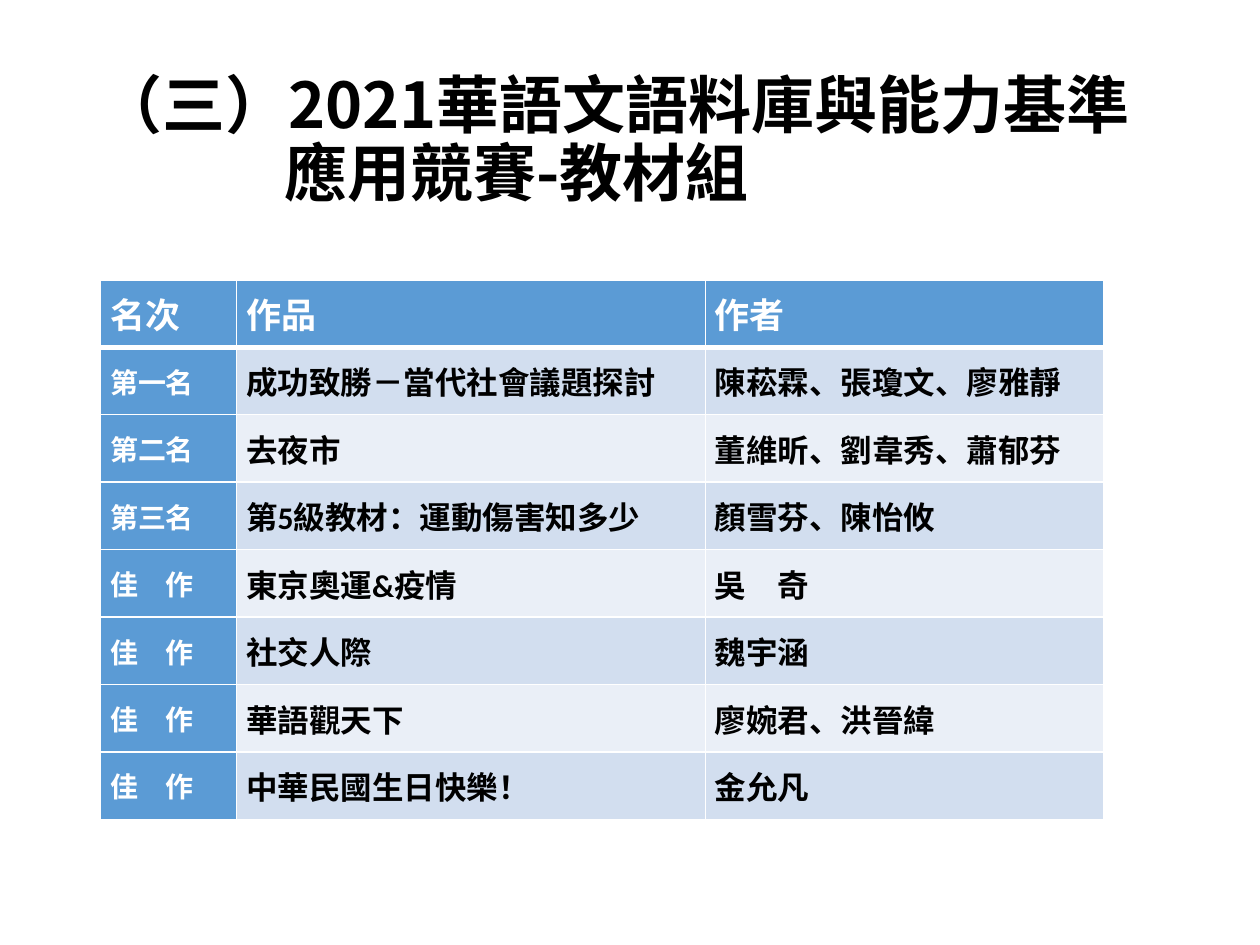
import pptx
import pptx.util
import pptx.dml.color
import pptx.enum.text
import pptx.oxml.ns
import lxml.etree

Cm = pptx.util.Cm
Pt = pptx.util.Pt
RGB = pptx.dml.color.RGBColor
MIDDLE = pptx.enum.text.MSO_ANCHOR.MIDDLE

BLACK = RGB(0x00, 0x00, 0x00)
WHITE = RGB(0xFF, 0xFF, 0xFF)
BLUE = RGB(0x5B, 0x9B, 0xD5)
BANDS = (RGB(0xEA, 0xEF, 0xF7), RGB(0xD2, 0xDE, 0xEF))

TITLE = "（三）2021華語文語料庫與能力基準應用競賽-教材組"
WIDTHS = (2.74, 9.45, 8.03)
HEIGHT = 1.36
ROWS = (
    ("名次", "作品", "作者"),
    ("第一名", "成功致勝－當代社會議題探討", "陳菘霖、張瓊文、廖雅靜"),
    ("第二名", "去夜市", "董維昕、劉韋秀、蕭郁芬"),
    ("第三名", "第5級教材：運動傷害知多少", "顏雪芬、陳怡攸"),
    ("佳　作", "東京奧運&疫情", "吳　奇"),
    ("佳　作", "社交人際", "魏宇涵"),
    ("佳　作", "華語觀天下", "廖婉君、洪晉緯"),
    ("佳　作", "中華民國生日快樂！", "金允凡"),
)


def format_all(target, values):
    for name, value in values.items():
        setattr(target, name, value)


def add_node(parent, tag, **attrs):
    return lxml.etree.SubElement(parent, pptx.oxml.ns.qn(tag), attrs)


def write_text(frame, text, size, color, face):
    para = frame.paragraphs[0]
    run = para.add_run()
    run.text = text
    format_all(run.font, {"size": Pt(size), "bold": True, "name": face})
    run.font.color.rgb = color
    return para, run


def add_title(slide):
    box = slide.shapes.add_textbox(Cm(1.75), Cm(1.02), Cm(21.9), Cm(3.68))
    frame = box.text_frame
    format_all(frame, {"word_wrap": True, "vertical_anchor": MIDDLE})
    face = "Noto Sans CJK SC"
    para, run = write_text(frame, TITLE, 36, BLACK, face)
    add_node(run.font._element, "a:ea", typeface=face)
    para.line_spacing = 0.9
    indent = Cm(3.73)
    props = para._p.get_or_add_pPr()
    props.set("marL", str(indent))
    props.set("indent", str(-indent))


def add_edges(cell, row):
    widths = {"L": 1, "R": 1, "T": 3 if row == 1 else 1, "B": 3 if row == 0 else 1}
    props = cell._tc.get_or_add_tcPr()
    for side, width in widths.items():
        line = add_node(props, "a:ln" + side, w=str(Pt(width)))
        fill = add_node(line, "a:solidFill")
        add_node(fill, "a:srgbClr", val=str(WHITE))


def fill_cell(cell, text, row, col):
    header = row == 0
    label = header or col == 0
    size = 20 if header else 16 if col == 0 else 18
    side = Cm(0.19)
    format_all(cell, {"margin_left": side, "margin_right": side,
                      "margin_top": 0, "margin_bottom": 0,
                      "vertical_anchor": MIDDLE})
    add_edges(cell, row)
    cell.fill.solid()
    cell.fill.fore_color.rgb = BLUE if label else BANDS[row % 2]
    write_text(cell.text_frame, text, size, WHITE if label else BLACK, "Calibri")


def add_awards(slide):
    frame = slide.shapes.add_table(
        len(ROWS), len(WIDTHS), Cm(2.03), Cm(5.64),
        Cm(sum(WIDTHS)), Cm(HEIGHT * len(ROWS)))
    table = frame.table
    for column, width in zip(table.columns, WIDTHS):
        column.width = Cm(width)
    for row, texts in enumerate(ROWS):
        table.rows[row].height = Cm(HEIGHT)
        for col, text in enumerate(texts):
            fill_cell(table.cell(row, col), text, row, col)


def main():
    deck = pptx.Presentation()
    format_all(deck, {"slide_width": Cm(25.4), "slide_height": Cm(19.05)})
    slide = deck.slides.add_slide(deck.slide_layouts[6])
    add_title(slide)
    add_awards(slide)
    deck.save("out.pptx")


if __name__ == "__main__":
    main()
